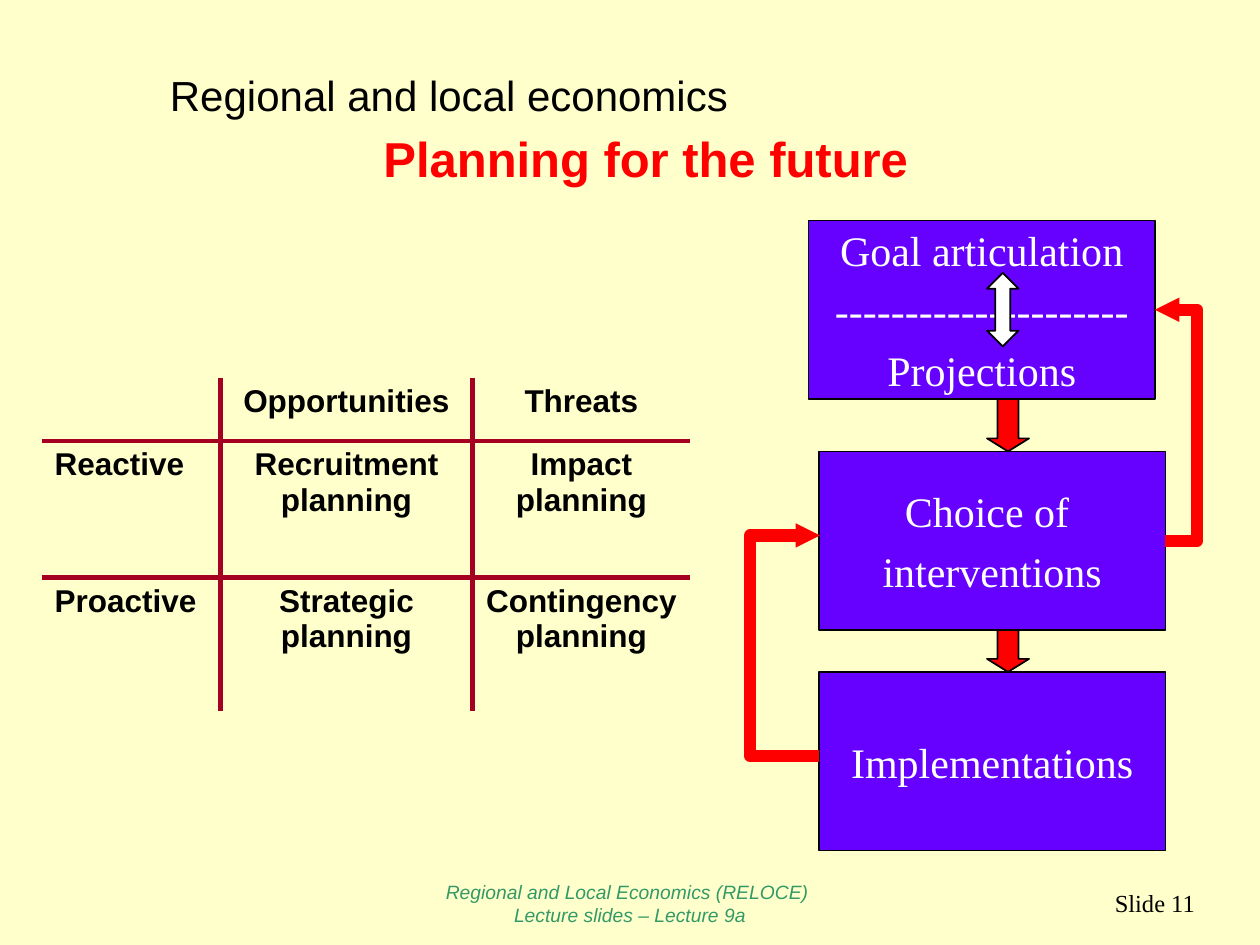
from dataclasses import dataclass

from lxml import etree
from pptx import Presentation
from pptx import util as u
from pptx.dml.color import RGBColor
from pptx.enum import shapes, text
from pptx.oxml import ns

UNIT = u.Inches(1) // 12  # the slide is a grid of 120 columns and 90 rows
ALIGN = text.PP_ALIGN
SHAPE = shapes.MSO_SHAPE


@dataclass(frozen=True)
class Style:
    size: int
    font: str
    color: str
    bold: bool = False
    italic: bool = False
    before: float = 0


@dataclass(frozen=True)
class Theme:
    background: str = "FFFFCC"
    panel: str = "6600FF"
    flow: str = "FF0000"
    white: str = "FFFFFF"
    outline: str = "000000"
    rule: str = "A50021"
    course: Style = Style(24, "Arial", "000000", before=5.5)
    title: Style = Style(28, "Arial", "FF0000", bold=True)
    panel_text: Style = Style(24, "Times New Roman", "FFFFFF", before=5.5)
    table: Style = Style(18, "Arial", "000000", bold=True, before=4)
    number: Style = Style(14, "Times New Roman", "000000")
    footer: Style = Style(11, "Arial", "339966", italic=True)


@dataclass(frozen=True)
class Area:
    col: float
    row: float
    cols: float
    rows: float

    def lengths(self) -> list[int]:
        return [grid(n) for n in (self.col, self.row, self.cols, self.rows)]


@dataclass(frozen=True)
class Block:
    kind: SHAPE
    area: Area
    fill: str
    lines: tuple[str, ...] = ()
    head: float | None = None


@dataclass(frozen=True)
class Loop:
    start: tuple[float, float]
    end: tuple[float, float]
    bend: float  # column of the vertical stretch


THEME = Theme()

BLOCKS = (
    Block(SHAPE.DOWN_ARROW, Area(94, 59, 4, 5), THEME.flow, head=0.31),
    Block(SHAPE.RECTANGLE, Area(77, 21, 33, 17), THEME.panel,
          ("Goal articulation", "-" * 21, "Projections")),
    Block(SHAPE.UP_DOWN_ARROW, Area(94, 26, 3, 7), THEME.white, head=0.47),
    Block(SHAPE.RECTANGLE, Area(78, 43, 33, 17), THEME.panel,
          ("Choice of ", "interventions")),
    Block(SHAPE.RECTANGLE, Area(78, 64, 33, 17), THEME.panel,
          ("Implementations",)),
    Block(SHAPE.DOWN_ARROW, Area(94, 38, 4, 5), THEME.flow, head=0.31),
)
LOOPS = (
    Loop((111, 51.5), (110, 29.5), 114),
    Loop((78, 72), (78.1, 51), 71.4),
)
MATRIX = (
    ("", "Opportunities", "Threats"),
    ("Reactive", "Recruitment planning", "Impact planning"),
    ("Proactive", "Strategic planning", "Contingency planning"),
)
MATRIX_COLS = (17, 24, 20.75)
MATRIX_ROWS = (6, 13, 12.7)


def grid(count: float) -> int:
    return round(count * UNIT)


def rgb(color: str) -> RGBColor:
    return RGBColor.from_string(color)


def write(frame, lines, style: Style, align=ALIGN.LEFT) -> None:
    for index, line in enumerate(lines):
        para = frame.add_paragraph() if index else frame.paragraphs[0]
        para.text = line
        para.alignment = align
        para.space_before = u.Pt(style.before)
        font = para.font
        font.name, font.size = style.font, u.Pt(style.size)
        font.bold, font.italic = style.bold, style.italic
        font.color.rgb = rgb(style.color)


def add_text(page, area: Area, lines, style: Style, align=ALIGN.LEFT,
             anchor=text.MSO_ANCHOR.MIDDLE) -> None:
    frame = page.shapes.add_textbox(*area.lengths()).text_frame
    frame.word_wrap = False
    frame.vertical_anchor = anchor
    write(frame, lines, style, align)


def add_block(page, block: Block) -> None:
    box = page.shapes.add_shape(block.kind, *block.area.lengths())
    box.shadow.inherit = False
    box.fill.solid()
    box.fill.fore_color.rgb = rgb(block.fill)
    box.line.color.rgb = rgb(THEME.outline)
    box.line.width = u.Pt(1)
    if block.head is not None:
        box.adjustments[0], box.adjustments[1] = 0.5, block.head
    if block.lines:
        box.text_frame.word_wrap = False
        box.text_frame.vertical_anchor = text.MSO_ANCHOR.MIDDLE
        write(box.text_frame, block.lines, THEME.panel_text, ALIGN.CENTER)


def add_loop(page, loop: Loop) -> None:
    ends = [grid(n) for n in (*loop.start, *loop.end)]
    arrow = page.shapes.add_connector(shapes.MSO_CONNECTOR.ELBOW, *ends)
    arrow.line.color.rgb = rgb(THEME.flow)
    arrow.line.width = u.Pt(7)
    # The bend is a share of the run from start to end
    bend = (loop.bend - loop.start[0]) / (loop.end[0] - loop.start[0])
    properties = arrow._element.spPr
    guides = properties.find(ns.qn("a:prstGeom")).get_or_add_avLst()
    etree.SubElement(guides, ns.qn("a:gd"), name="adj1",
                     fmla=f"val {round(bend * 100000)}")
    line = properties.find(ns.qn("a:ln"))
    etree.SubElement(line, ns.qn("a:tailEnd"), type="triangle", w="sm", len="sm")
    etree.SubElement(properties, ns.qn("a:effectLst"))


def set_border(cell, side: str, visible: bool) -> None:
    line = etree.SubElement(cell._tc.get_or_add_tcPr(), ns.qn(f"a:ln{side}"),
                            w=str(u.Pt(3)))
    if visible:
        fill = etree.SubElement(line, ns.qn("a:solidFill"))
        etree.SubElement(fill, ns.qn("a:srgbClr"), val=THEME.rule)
    else:
        etree.SubElement(line, ns.qn("a:noFill"))


def add_matrix(page) -> None:
    area = Area(4, 36, sum(MATRIX_COLS), sum(MATRIX_ROWS))
    last_row, last_col = len(MATRIX_ROWS) - 1, len(MATRIX_COLS) - 1
    table = page.shapes.add_table(last_row + 1, last_col + 1,
                                  *area.lengths()).table
    table.first_row = table.horz_banding = False
    for column, cols in zip(table.columns, MATRIX_COLS):
        column.width = grid(cols)
    for row, rows in zip(table.rows, MATRIX_ROWS):
        row.height = grid(rows)
    for r, words in enumerate(MATRIX):
        for c, word in enumerate(words):
            cell = table.cell(r, c)
            write(cell.text_frame, [word], THEME.table,
                  ALIGN.CENTER if c else ALIGN.LEFT)
            # Only the inner edges are ruled
            for side, inner in (("L", c > 0), ("R", c < last_col),
                                ("T", r > 0), ("B", r < last_row)):
                set_border(cell, side, inner)
            cell.fill.background()


def main() -> None:
    deck = Presentation()
    deck.slide_width, deck.slide_height = grid(120), grid(90)
    page = deck.slides.add_slide(deck.slide_layouts.get_by_name("Title Only"))
    page.background.fill.solid()
    page.background.fill.fore_color.rgb = rgb(THEME.background)

    # Headings
    add_text(page, Area(15, 6, 56, 6), ["Regional and local economics"],
             THEME.course, anchor=text.MSO_ANCHOR.TOP)
    title = page.shapes.title
    title.left, title.top, title.width, title.height = Area(16, 12, 91, 6).lengths()
    title.text_frame.auto_size = text.MSO_AUTO_SIZE.NONE
    write(title.text_frame, ["Planning for the future"], THEME.title, ALIGN.CENTER)

    # Planning process with its feedback loops
    for block in BLOCKS:
        add_block(page, block)
    for loop in LOOPS:
        add_loop(page, loop)

    # Planning styles
    add_matrix(page)

    # Footer
    add_text(page, Area(41, 83, 38, 6),
             ["Regional and Local Economics (RELOCE) ", "Lecture slides – Lecture 9a"],
             THEME.footer, ALIGN.CENTER)
    add_text(page, Area(90, 83, 25, 6), ["Slide 11"], THEME.number, ALIGN.RIGHT)
    deck.save("out.pptx")


if __name__ == "__main__":
    main()
